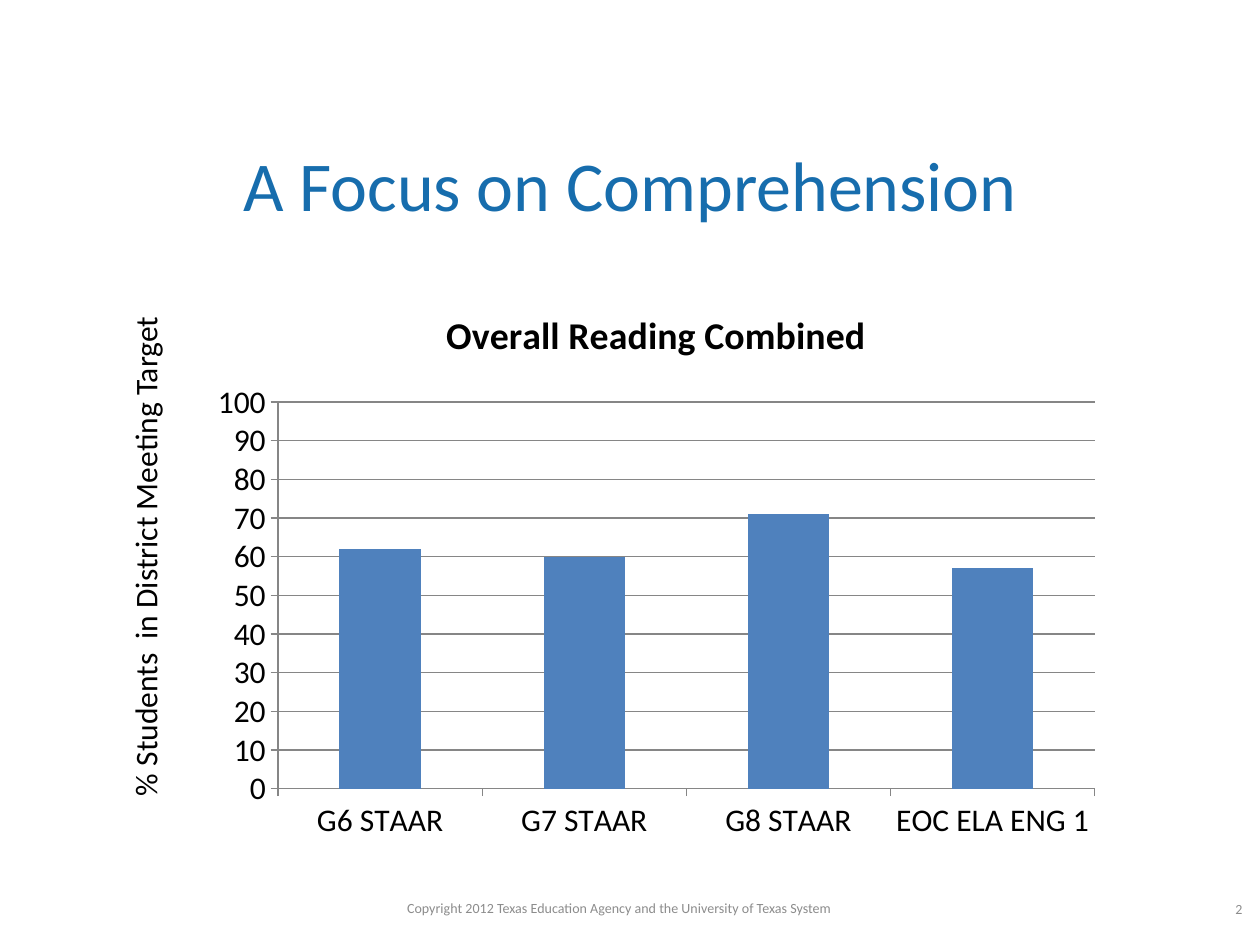
from pptx import Presentation
from pptx.chart.data import CategoryChartData
from pptx.dml.color import RGBColor
from pptx.enum.chart import XL_CHART_TYPE as ChartType, XL_TICK_MARK as TickMark
from pptx.enum.text import MSO_ANCHOR as Anchor, PP_ALIGN as Align
from pptx.util import Inches, Pt

COLORS = {
    "title": "176DAD",
    "footer": "8C8C8C",
    "text": "000000",
    "bar": "4F81BD",
    "line": "868686",
}


class SlideBuilder:
    font_name = "Calibri"
    columns, rows = 120, 90

    def __init__(self, presentation):
        self.slide = presentation.slides.add_slide(presentation.slide_layouts[6])
        self.column = presentation.slide_width / self.columns
        self.row = presentation.slide_height / self.rows

    def place(self, left, top, width, height):
        return (
            round(left * self.column),
            round(top * self.row),
            round(width * self.column),
            round(height * self.row),
        )

    def style(self, font, size, color, bold=False):
        font.name = self.font_name
        font.size = Pt(size)
        font.bold = bold
        font.color.rgb = RGBColor.from_string(COLORS[color])

    def text(self, content, box, size, color, align=Align.CENTER,
             anchor=Anchor.MIDDLE, direction="horz"):
        shape = self.slide.shapes.add_textbox(*self.place(*box))
        frame = shape.text_frame
        frame.text = content
        frame.word_wrap = True
        frame.vertical_anchor = anchor
        frame._txBody.bodyPr.set("vert", direction)
        paragraph = frame.paragraphs[0]
        paragraph.alignment = align
        self.style(paragraph.runs[0].font, size, color)

    def line(self, line_format):
        line_format.color.rgb = RGBColor.from_string(COLORS["line"])
        line_format.width = Pt(0.75)

    def column_chart(self, title, values, box, size):
        data = CategoryChartData()
        data.categories = list(values)
        data.add_series(title, list(values.values()))
        chart = self.slide.shapes.add_chart(
            ChartType.COLUMN_CLUSTERED, *self.place(*box), data
        ).chart
        self.style(chart.font, size, "text")
        chart.has_legend = False
        chart.has_title = True
        chart.chart_title.include_in_layout = False
        chart.chart_title.text_frame.text = title
        heading = chart.chart_title.text_frame.paragraphs[0]
        self.style(heading.runs[0].font, size * 1.2, "text", bold=True)

        for axis in (chart.category_axis, chart.value_axis):
            axis.major_tick_mark = TickMark.OUTSIDE
            axis.minor_tick_mark = TickMark.NONE
            self.line(axis.format.line)
        chart.value_axis.minimum_scale = 0
        chart.value_axis.maximum_scale = 100
        chart.value_axis.major_unit = 10
        self.line(chart.value_axis.major_gridlines.format.line)

        plot = chart.plots[0]
        plot.gap_width = 150
        plot.vary_by_categories = False
        fill = plot.series[0].format.fill
        fill.solid()
        fill.fore_color.rgb = RGBColor.from_string(COLORS["bar"])


def main():
    presentation = Presentation()
    presentation.slide_width = Inches(10)
    presentation.slide_height = Inches(7.5)
    builder = SlideBuilder(presentation)

    builder.text("A Focus on Comprehension", (6, 12.5, 108, 10), 40, "title")
    builder.text(
        "Copyright 2012 Texas Education Agency and the University of Texas System",
        (25, 85, 68, 3), 8, "footer",
    )
    builder.text("2", (115, 85, 6, 3.2), 8, "footer")
    builder.column_chart(
        "Overall Reading Combined",
        {"G6 STAAR": 62, "G7 STAAR": 60, "G8 STAAR": 71, "EOC ELA ENG 1": 57},
        (19, 27, 87, 54), 18,
    )
    builder.text(
        "% Students  in District Meeting Target", (11.4, 27, 6, 50), 18, "text",
        align=Align.LEFT, anchor=Anchor.TOP, direction="vert270",
    )
    presentation.save("out.pptx")


if __name__ == "__main__":
    main()
